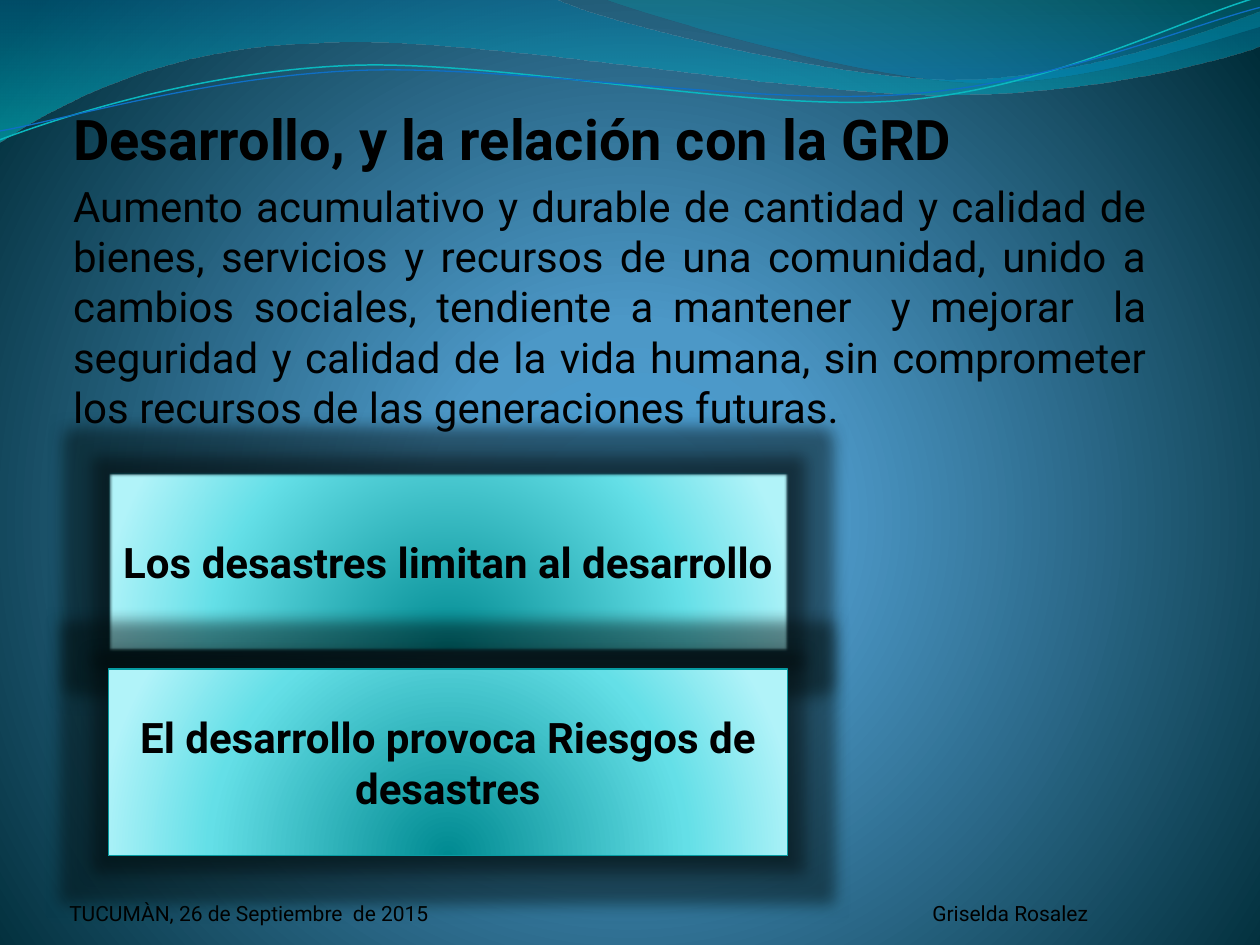
import math

import pptx
import pptx.dml.color
import pptx.enum.shapes
import pptx.enum.text
import pptx.oxml
import pptx.oxml.ns
import pptx.util

Inches = pptx.util.Inches
Pt = pptx.util.Pt
RGBColor = pptx.dml.color.RGBColor
ALIGN = pptx.enum.text.PP_ALIGN
ANCHOR = pptx.enum.text.MSO_ANCHOR

BLACK = RGBColor(0x00, 0x00, 0x00)
TEAL_LINE = RGBColor(0x06, 0x9C, 0xA3)
TEAL_SHADOW = RGBColor(0x02, 0x4B, 0x4E)
CURVE_TEAL = RGBColor(0x0A, 0xB8, 0xBF)
CURVE_BLUE = RGBColor(0x0F, 0x6F, 0xC6)
BACKDROP = [(0, RGBColor(0x4A, 0xA0, 0xD6), 100),
            (25, RGBColor(0x4C, 0x98, 0xC7), 100),
            (100, RGBColor(0x00, 0x2C, 0x38), 100)]
BOX_GLOW = [(0, RGBColor(0x00, 0x8A, 0x91), 100),
            (68, RGBColor(0x64, 0xDF, 0xE7), 100),
            (100, RGBColor(0xB1, 0xF3, 0xF9), 100)]
WIDE_WAVE = [(0, RGBColor(0x00, 0x74, 0xA1), 45),
             (100, RGBColor(0x00, 0xC6, 0xCF), 55)]
RIGHT_WAVE = [(0, RGBColor(0x00, 0xA1, 0xA9), 30),
              (80, RGBColor(0x00, 0x8B, 0xBF), 45)]
TILT = -2.7
NS = pptx.oxml.ns.nsdecls("a")
qn = pptx.oxml.ns.qn


def color_xml(color, alpha):
    return f'<a:srgbClr val="{color}"><a:alpha val="{alpha * 1000}"/></a:srgbClr>'


def set_gradient(fill, parent, stops, focus=None):
    fill.gradient()
    old = parent.find(qn("a:gradFill"))
    colors = "".join(f'<a:gs pos="{place * 1000}">{color_xml(color, alpha)}</a:gs>'
                     for place, color, alpha in stops)
    if focus:
        edges = " ".join(f'{side}="{value * 1000}"' for side, value in zip("ltrb", focus))
        direction = f'<a:path path="circle"><a:fillToRect {edges}/></a:path>'
    else:
        direction = '<a:lin ang="5400000" scaled="1"/>'
    parent.replace(old, pptx.oxml.parse_xml(
        f'<a:gradFill {NS} rotWithShape="1"><a:gsLst>{colors}</a:gsLst>{direction}</a:gradFill>'))


def set_effects(shape, soft_edge):
    glow = f'<a:glow rad="{Pt(18)}">{color_xml(BLACK, 40)}</a:glow>'
    shadow = (f'<a:outerShdw blurRad="{Pt(4.5)}" dist="{Pt(3)}" dir="5400000" algn="ctr" '
              f'rotWithShape="0">{color_xml(TEAL_SHADOW, 48)}</a:outerShdw>')
    soft = f'<a:softEdge rad="{Pt(soft_edge)}"/>' if soft_edge else ""
    shape._element.spPr.append(pptx.oxml.parse_xml(
        f'<a:effectLst {NS}>{glow}{shadow}{soft}</a:effectLst>'))


def write(paragraph, text, size=24, bold=False, align=None, before=0):
    run = paragraph.add_run()
    run.text = text
    run.font.name = "Roboto"
    run.font.size = Pt(size)
    run.font.bold = bold
    run.font.color.rgb = BLACK
    paragraph.alignment = align
    paragraph.space_before = Pt(before)


def turn(point, center, degrees):
    angle = math.radians(degrees)
    dx, dy = point[0] - center[0], point[1] - center[1]
    return (center[0] + dx * math.cos(angle) - dy * math.sin(angle),
            center[1] + dx * math.sin(angle) + dy * math.cos(angle))


def bend(shape, pieces):
    segments = list(shape._element.iter(qn("a:lnTo")))
    for piece in pieces:
        group = [segments.pop(0) for _ in range(len(piece) // 2)]
        if len(group) == 3:
            cubic = pptx.oxml.parse_xml(f"<a:cubicBezTo {NS}/>")
            group[0].addprevious(cubic)
            for segment in group:
                cubic.append(segment[0])
                segment.getparent().remove(segment)


class FlowSlide:
    def __init__(self, deck):
        self.slide = deck.slides.add_slide(deck.slide_layouts[6])
        background = self.slide.background
        set_gradient(background.fill, background._cSld.bg.bgPr, BACKDROP, (10, 110, 10, 100))

    def curve(self, start, pieces, tilt=0):
        points = [start] + [pair for piece in pieces for pair in zip(piece[::2], piece[1::2])]
        center = [(min(axis) + max(axis)) / 2 for axis in zip(*points)]
        points = [tuple(map(Inches, turn(point, center, -tilt))) for point in points]
        builder = self.slide.shapes.build_freeform(*points[0])
        builder.add_line_segments(points[1:], close=not tilt)
        shape = builder.convert_to_shape()
        bend(shape, pieces)
        shape.rotation = tilt
        shape.shadow.inherit = False
        return shape

    def wave(self, start, pieces, stops):
        shape = self.curve(start, pieces)
        set_gradient(shape.fill, shape._element.spPr, stops)
        shape.line.fill.background()

    def thread(self, start, pieces, color, width):
        shape = self.curve(start, pieces, TILT)
        shape.fill.background()
        shape.line.color.rgb = color
        shape.line.width = Pt(width)

    def text(self, place, insets=(0, 0, 0, 0), anchor=ANCHOR.TOP):
        frame = self.slide.shapes.add_textbox(*map(Inches, place)).text_frame
        frame.word_wrap = True
        frame.vertical_anchor = anchor
        frame.margin_left, frame.margin_top, frame.margin_right, frame.margin_bottom = map(
            Inches, insets)
        return frame

    def box(self, top, height, text, soft_edge=0):
        shape = self.slide.shapes.add_shape(
            pptx.enum.shapes.MSO_SHAPE.RECTANGLE,
            Inches(0.86), Inches(top), Inches(5.39), Inches(height))
        set_gradient(shape.fill, shape._element.spPr, BOX_GLOW, (50, 130, 50, -30))
        shape.line.color.rgb = TEAL_LINE
        shape.line.width = Pt(0.75)
        set_effects(shape, soft_edge)
        shape.text_frame.word_wrap = True
        shape.text_frame.vertical_anchor = ANCHOR.MIDDLE
        write(shape.text_frame.paragraphs[0], text, bold=True, align=ALIGN.CENTER)


def main():
    deck = pptx.Presentation()
    deck.slide_width, deck.slide_height = Inches(10), Inches(7.5)
    page = FlowSlide(deck)

    page.wave((0, 0), [
        (4.4, -0.01), (4.76, 0.17, 6.64, 0.63, 7.58, 0.63),
        (8.53, 0.63, 9.58, 0.26, 10, 0.09), (10.01, 0.36),
        (9.83, 0.44, 8.7, 0.76, 7.46, 0.75), (6.22, 0.75, 3.82, 0.28, 2.57, 0.34),
        (1.29, 0.36, 0.46, 0.83, -0.01, 1.13)], WIDE_WAVE)
    page.wave((4.79, -0.01), [
        (5.09, 0.11, 6.82, 0.62, 7.69, 0.65), (8.56, 0.69, 9.61, 0.32, 10, 0.21),
        (10, 0)], RIGHT_WAVE)
    page.thread((0, 1.11), [
        (0.48, 0.93, 1.58, 0.57, 2.77, 0.52), (3.95, 0.47, 5.93, 0.89, 7.13, 0.8),
        (8.33, 0.71, 9.38, 0.15, 9.98, -0.02)], CURVE_TEAL, 0.85)
    page.thread((0, 1.04), [
        (0.47, 0.96, 1.64, 0.61, 2.83, 0.56), (4.03, 0.51, 5.97, 0.84, 7.17, 0.75),
        (8.36, 0.67, 9.41, 0.21, 10, 0.06)], CURVE_BLUE, 0.75)

    definition = page.text((0.58, 0.78, 8.59, 6.25), insets=(0, 0.05, 0.07, 0.05))
    write(definition.paragraphs[0], "Desarrollo, y la relación con la GRD",
          size=32, bold=True, align=ALIGN.JUSTIFY, before=6.4)
    write(definition.add_paragraph(),
          "Aumento acumulativo y durable de cantidad y calidad de bienes, servicios y "
          "recursos de una comunidad, unido a cambios sociales, tendiente a mantener  y "
          "mejorar  la seguridad y calidad de la vida humana, sin comprometer los "
          "recursos de las generaciones futuras.",
          align=ALIGN.JUSTIFY, before=4.8)

    footer = page.text((0.55, 6.95, 8.83, 0.4), anchor=ANCHOR.BOTTOM).paragraphs[0]
    write(footer, "TUCUMÀN, 26 de Septiembre  de 2015\tGriselda Rosalez", size=12)
    footer._p.get_or_add_pPr().append(pptx.oxml.parse_xml(
        f'<a:tabLst {NS}><a:tab pos="{Inches(6.85)}" algn="l"/></a:tabLst>'))

    page.box(3.75, 1.41, "Los desastres limitan al desarrollo", soft_edge=1)
    page.box(5.31, 1.48, "El desarrollo provoca Riesgos de desastres")

    deck.save("out.pptx")


if __name__ == "__main__":
    main()
